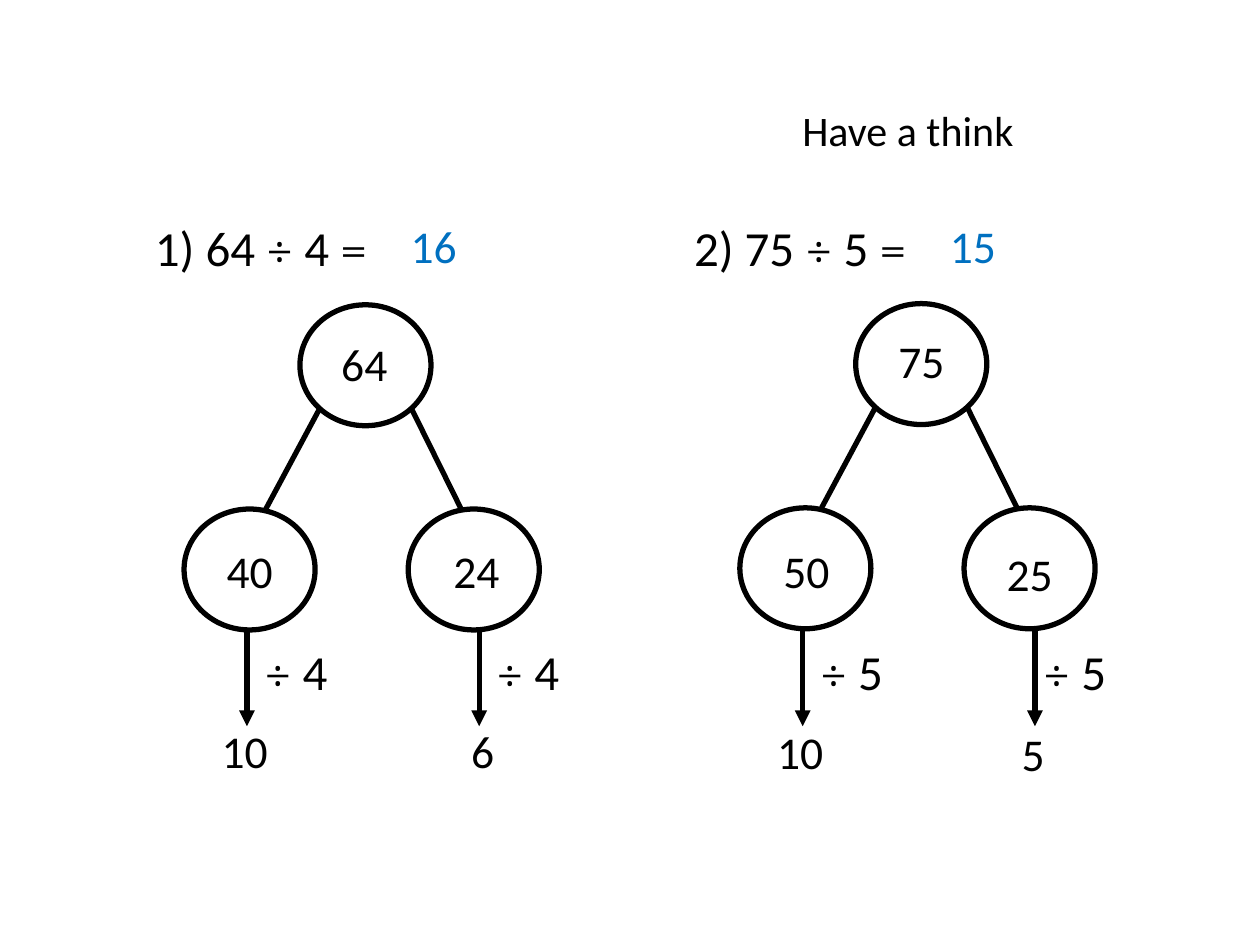
from itertools import groupby

from lxml.etree import SubElement
from pptx import Presentation
from pptx.dml.color import RGBColor
from pptx.enum.shapes import MSO_CONNECTOR, MSO_SHAPE
from pptx.oxml.ns import qn
from pptx.util import Pt

BLACK, WHITE, BLUE = "000000", "FFFFFF", "0070C0"
TEXT_FONT, SYMBOL_FONT = "Calibri", "Cambria"
SYMBOLS = "÷="

# Content: each text with its left and top
HEADING = ("Have a think", 451.4, 56.2)
PROBLEMS = [
    {
        "equation": ("1) 64 ÷ 4 =", 81.4, 121),
        "answer": ("16", 227.5, 121),
        "numbers": [("64", 187.9, 188.6), ("40", 122.4, 306.7), ("24", 252, 306.7),
                    ("10", 119.5, 409.7), ("6", 262.1, 409.7)],
        "divisors": [("÷ 4", 144, 362.9), ("÷ 4", 276.5, 362.9)],
    },
    {
        "equation": ("2) 75 ÷ 5 =", 389.5, 121),
        "answer": ("15", 535.7, 121),
        "numbers": [("75", 506.2, 186.5), ("50", 440.6, 306.7), ("25", 568.1, 308.2),
                    ("10", 437, 410.4), ("5", 576.7, 411.1)],
        "divisors": [("÷ 5", 461.5, 362.9), ("÷ 5", 589, 362.9)],
    },
]

# Geometry of the first tree; the next one is moved by TREE_STEP
TREE_STEP = (317.6, -0.7)
CIRCLE_SIZE = (74.9, 69.1)
CIRCLES = [(171.4, 174.2), (105.2, 290.9), (233.3, 290.9)]
BRANCHES = [(182.4, 234, 151.9, 290.9), (235.4, 234, 263.9, 291.6)]
ARROW_X = (141.1, 273.8)
ARROW_TOP, ARROW_BOTTOM = 360.7, 415


def color(value):
    return RGBColor.from_string(value)


def add_text(slide, content, width, height, size, text_color=BLACK):
    text, left, top = content
    box = slide.shapes.add_textbox(Pt(left), Pt(top), Pt(width), Pt(height))
    box.text_frame.word_wrap = True
    paragraph = box.text_frame.paragraphs[0]
    for is_symbol, characters in groupby(text, lambda character: character in SYMBOLS):
        run = paragraph.add_run()
        run.text = "".join(characters)
        run.font.name = SYMBOL_FONT if is_symbol else TEXT_FONT
        run.font.size = Pt(size)
        run.font.color.rgb = color(text_color)


def add_circle(slide, left, top):
    circle = slide.shapes.add_shape(
        MSO_SHAPE.OVAL, Pt(left), Pt(top), *map(Pt, CIRCLE_SIZE))
    circle.shadow.inherit = False
    circle.fill.solid()
    circle.fill.fore_color.rgb = color(WHITE)
    circle.line.color.rgb = color(BLACK)
    circle.line.width = Pt(3)


def add_line(slide, x1, y1, x2, y2, arrow=False):
    connector = slide.shapes.add_connector(
        MSO_CONNECTOR.STRAIGHT, Pt(x1), Pt(y1), Pt(x2), Pt(y2))
    connector.line.color.rgb = color(BLACK)
    connector.line.width = Pt(3)
    properties = connector.element.spPr
    if arrow:
        SubElement(properties.find(qn("a:ln")), qn("a:tailEnd"), type="triangle")
    SubElement(properties, qn("a:effectLst"))


def add_problem(slide, problem, index):
    dx, dy = (index * step for step in TREE_STEP)

    # Part-whole tree
    for left, top in CIRCLES:
        add_circle(slide, left + dx, top + dy)
    for x1, y1, x2, y2 in BRANCHES:
        add_line(slide, x1 + dx, y1 + dy, x2 + dx, y2 + dy)
    for x in ARROW_X:
        add_line(slide, x + dx, ARROW_TOP, x + dx, ARROW_BOTTOM, arrow=True)

    # Equation, answer and labels
    add_text(slide, problem["equation"], 154.8, 41, 28)
    add_text(slide, problem["answer"], 49, 38.9, 26, BLUE)
    for number in problem["numbers"]:
        add_text(slide, number, 49, 38.9, 26)
    for divisor in problem["divisors"]:
        add_text(slide, divisor, 56.2, 41, 28)


def main():
    presentation = Presentation()
    presentation.slide_width, presentation.slide_height = Pt(720), Pt(540)
    slide = presentation.slides.add_slide(presentation.slide_layouts[6])
    add_text(slide, HEADING, 164.9, 36, 24)
    for index, problem in enumerate(PROBLEMS):
        add_problem(slide, problem, index)
    presentation.save("out.pptx")


if __name__ == "__main__":
    main()
